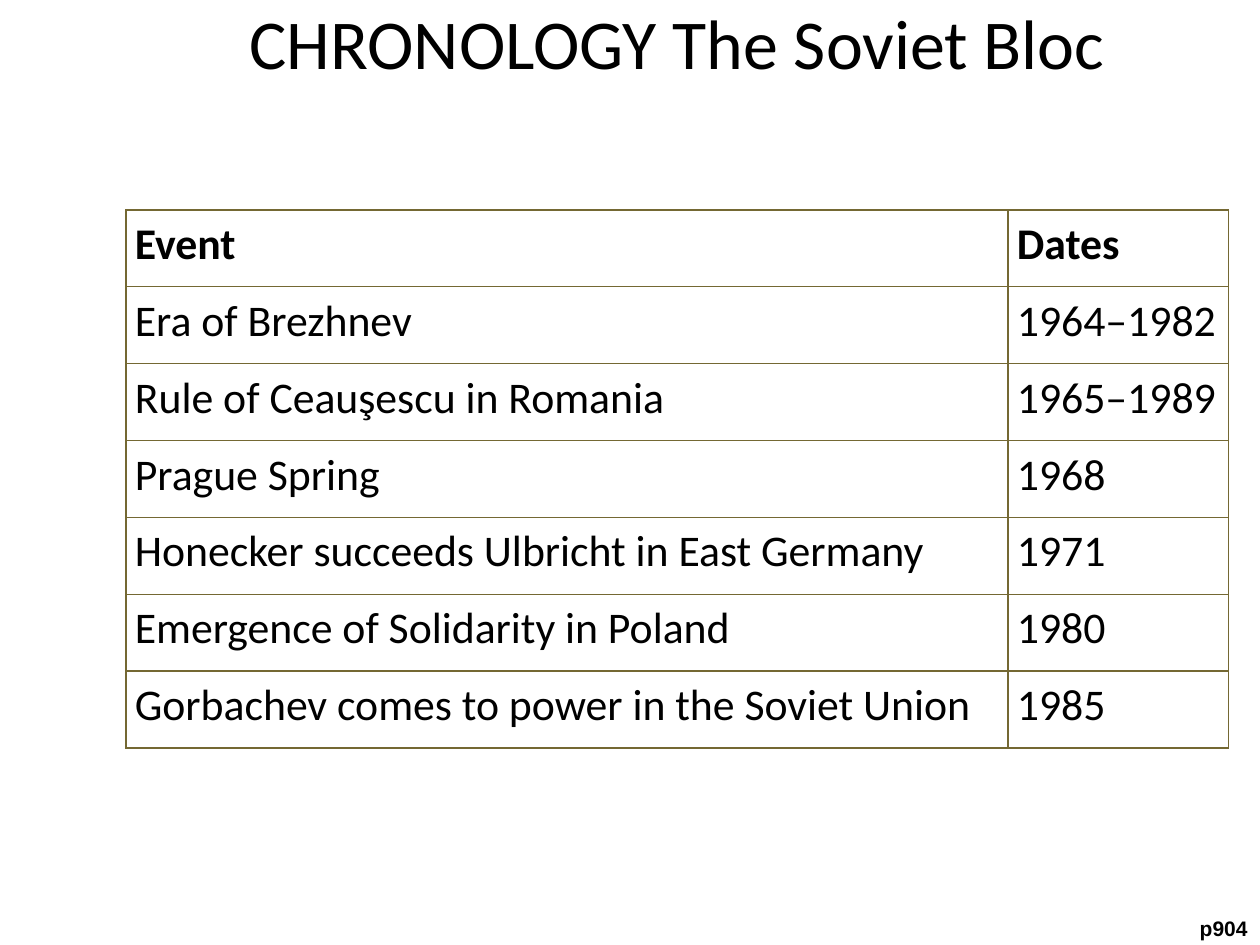
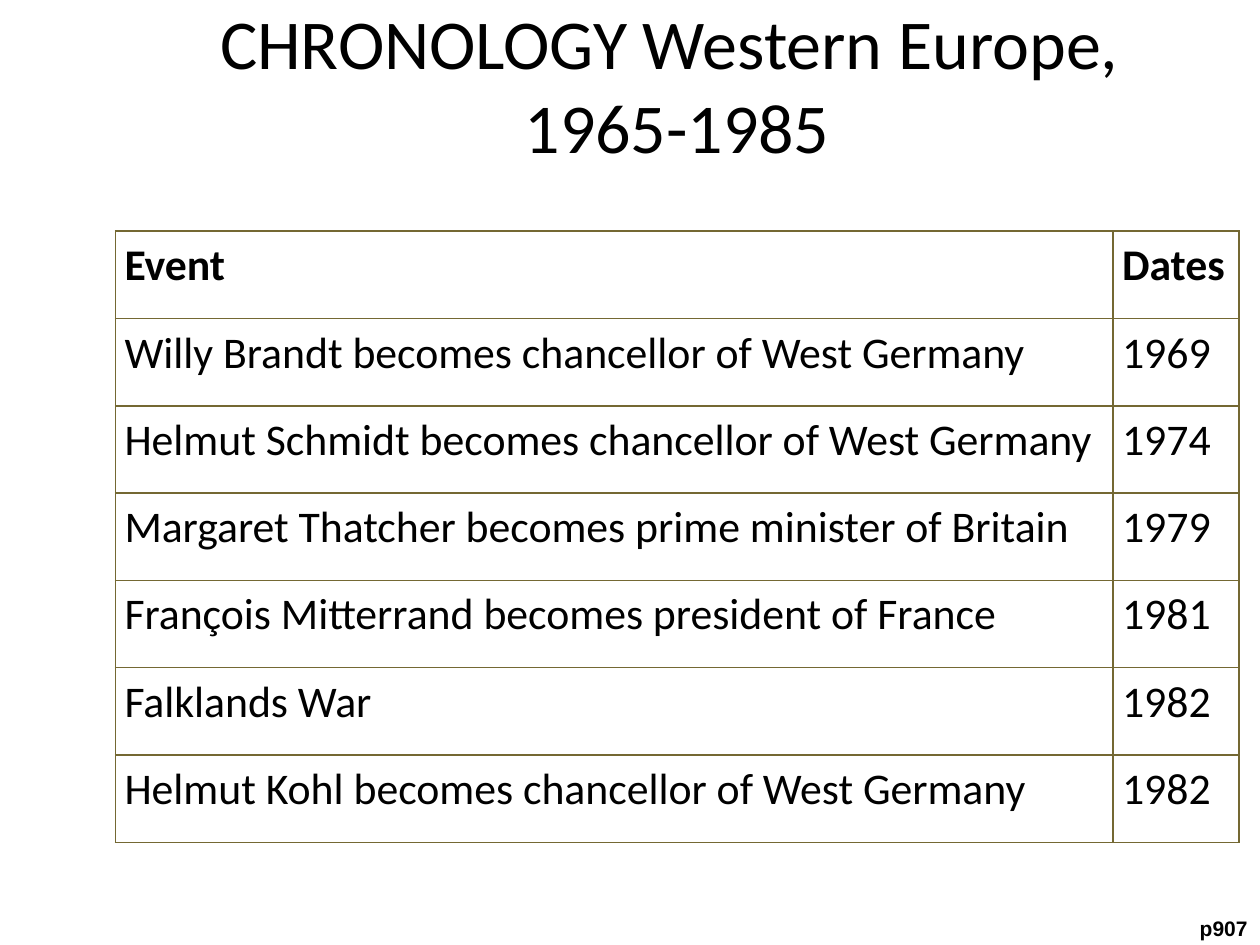
from dataclasses import dataclass

import lxml.etree
import pptx
import pptx.dml.color
import pptx.enum.text
import pptx.oxml.ns
import pptx.util

Cm = pptx.util.Cm
Pt = pptx.util.Pt
PP_ALIGN = pptx.enum.text.PP_ALIGN
ANCHOR = pptx.enum.text.MSO_ANCHOR
TITLE_ONLY = 5


@dataclass(frozen=True)
class Theme:
    ink: str = "000000"
    rule: str = "746833"
    heading_font: str = "Calibri"
    page_font: str = "Arial"
    title_size: int = 40
    table_size: int = 25
    page_size: int = 12
    rule_width: int = 1
    line_spacing: float = 1.15


class ChronologyDeck:
    def __init__(self, theme):
        self.theme = theme
        self.presentation = pptx.Presentation()
        self.presentation.slide_width = Cm(25.4)
        self.presentation.slide_height = Cm(19.05)
        self.slide = None

    def add_slide(self):
        layout = self.presentation.slide_layouts[TITLE_ONLY]
        self.slide = self.presentation.slides.add_slide(layout)

    def style(self, paragraph, font_name, size, bold=False):
        font = paragraph.font
        font.name = font_name
        font.size = Pt(size)
        font.bold = bold
        font.color.rgb = pptx.dml.color.RGBColor.from_string(self.theme.ink)

    def title(self, wording, top):
        heading = self.slide.shapes.title
        heading.left, heading.top = Cm(1.9), Cm(top)
        heading.width, heading.height = Cm(23.5), Cm(1.27)
        frame = heading.text_frame
        frame.text = wording
        frame.auto_size = pptx.enum.text.MSO_AUTO_SIZE.NONE
        frame.vertical_anchor = ANCHOR.MIDDLE
        paragraph = frame.paragraphs[0]
        paragraph.alignment = PP_ALIGN.CENTER
        self.style(paragraph, self.theme.heading_font, self.theme.title_size)

    def page_reference(self, wording):
        reference = self.slide.shapes.add_textbox(Cm(23.8), Cm(18.34), Cm(1.6), Cm(0.76))
        frame = reference.text_frame
        frame.word_wrap = True
        frame.text = wording
        paragraph = frame.paragraphs[0]
        paragraph.alignment = PP_ALIGN.RIGHT
        self.style(paragraph, self.theme.page_font, self.theme.page_size, bold=True)

    def border(self, cell):
        """Draw a rule on all four sides; the fill must be set afterwards."""
        properties = cell._tc.get_or_add_tcPr()
        for side in ("lnL", "lnR", "lnT", "lnB"):
            line = lxml.etree.SubElement(properties, pptx.oxml.ns.qn(f"a:{side}"),
                                         w=str(Pt(self.theme.rule_width)))
            fill = lxml.etree.SubElement(line, pptx.oxml.ns.qn("a:solidFill"))
            lxml.etree.SubElement(fill, pptx.oxml.ns.qn("a:srgbClr"), val=self.theme.rule)

    def cell(self, cell, wording, bold):
        cell.margin_left = cell.margin_right = Cm(0.18)
        cell.margin_top = cell.margin_bottom = 0
        cell.vertical_anchor = ANCHOR.TOP
        self.border(cell)
        cell.fill.background()
        cell.text = wording
        paragraph = cell.text_frame.paragraphs[0]
        paragraph.line_spacing = self.theme.line_spacing
        self.style(paragraph, self.theme.heading_font, self.theme.table_size, bold)

    def chronology(self, events, left, top, column_widths, row_height):
        entries = [("Event", "Dates"), *events]
        table = self.slide.shapes.add_table(
            len(entries), len(column_widths), Cm(left), Cm(top),
            Cm(sum(column_widths)), Cm(row_height * len(entries))).table
        table.horz_banding = False
        for column, width in zip(table.columns, column_widths):
            column.width = Cm(width)
        for row_index, (row, entry) in enumerate(zip(table.rows, entries)):
            row.height = Cm(row_height)
            for cell, wording in zip(row.cells, entry):
                self.cell(cell, wording, bold=row_index == 0)


SOVIET_BLOC = [
    ("Era of Brezhnev", "1964–1982"),
    ("Rule of Ceauşescu in Romania", "1965–1989"),
    ("Prague Spring", "1968"),
    ("Honecker succeeds Ulbricht in East Germany", "1971"),
    ("Emergence of Solidarity in Poland", "1980"),
    ("Gorbachev comes to power in the Soviet Union", "1985"),
]

WESTERN_EUROPE = [
    ("Willy Brandt becomes chancellor of West Germany", "1969"),
    ("Helmut Schmidt becomes chancellor of West Germany", "1974"),
    ("Margaret Thatcher becomes prime minister of Britain", "1979"),
    ("François Mitterrand becomes president of France", "1981"),
    ("Falklands War", "1982"),
    ("Helmut Kohl becomes chancellor of West Germany", "1982"),
]


def main():
    deck = ChronologyDeck(Theme())

    deck.add_slide()
    deck.title("CHRONOLOGY The Soviet Bloc", top=0.2)
    deck.chronology(SOVIET_BLOC, left=2.54, top=4.23,
                    column_widths=(17.78, 4.45), row_height=1.55)
    deck.page_reference("p904")

    deck.add_slide()
    deck.title("CHRONOLOGY Western Europe, \v1965-1985", top=1.04)
    deck.chronology(WESTERN_EUROPE, left=2.33, top=4.66,
                    column_widths=(20.11, 2.54), row_height=1.76)
    deck.page_reference("p907")

    deck.presentation.save("out.pptx")


if __name__ == "__main__":
    main()
